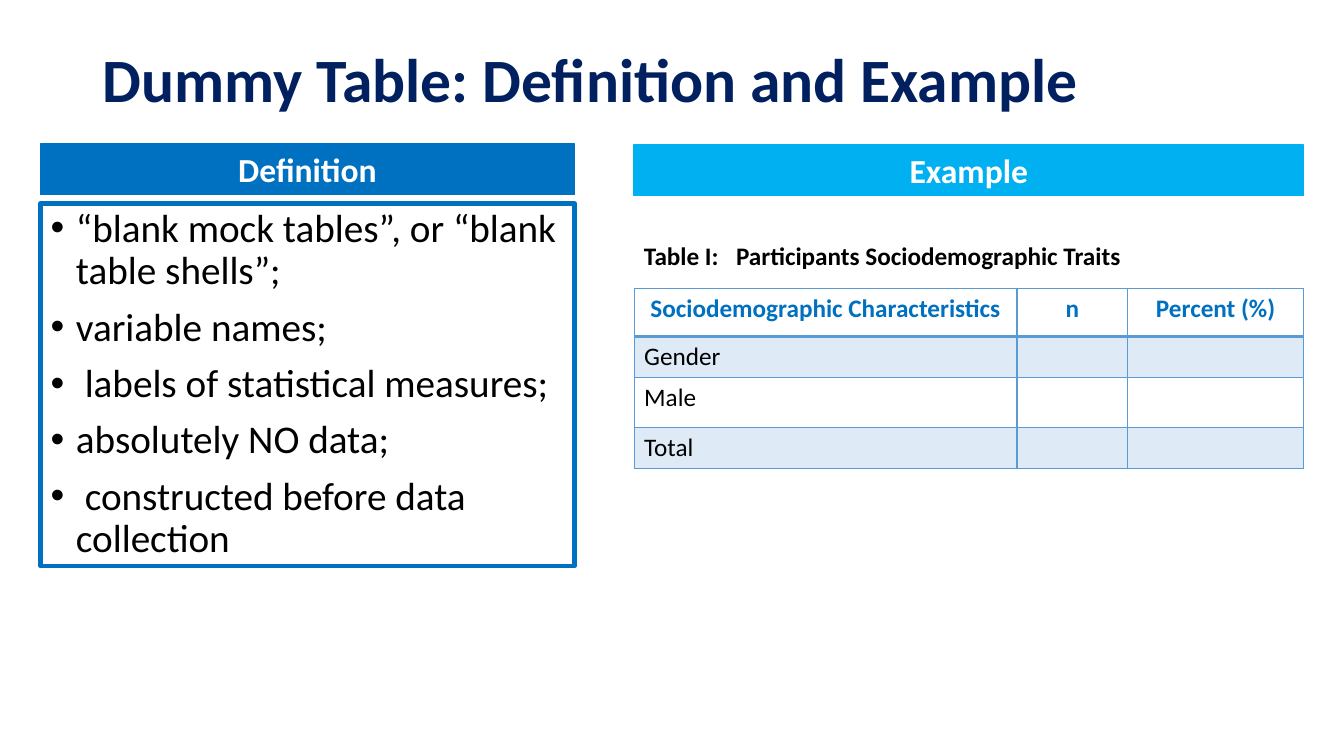
from dataclasses import dataclass

from lxml import etree
from pptx import Presentation
from pptx.dml.color import RGBColor
from pptx.enum.shapes import MSO_SHAPE
from pptx.enum.text import MSO_ANCHOR, MSO_AUTO_SIZE, PP_ALIGN
from pptx.oxml.ns import qn
from pptx.util import Cm, Pt

RECT = MSO_SHAPE.RECTANGLE
MIDDLE = MSO_ANCHOR.MIDDLE
TOP = MSO_ANCHOR.TOP
FIXED = MSO_AUTO_SIZE.NONE
LEFT = PP_ALIGN.LEFT
CENTER = PP_ALIGN.CENTER


@dataclass(frozen=True)
class Theme:
    font: str = "Calibri"
    navy: str = "002060"
    blue: str = "0070C0"
    sky: str = "00B0F0"
    grid: str = "5B9BD5"
    band: str = "DEEBF7"
    black: str = "000000"
    white: str = "FFFFFF"
    title: int = 44
    body: int = 28
    head: int = 24
    small: int = 18


class Page:
    def __init__(self, deck, theme):
        self.theme = theme
        self.slide = deck.slides.add_slide(deck.slide_layouts[1])

    def place(self, shape, box):
        shape.left, shape.top, shape.width, shape.height = map(Cm, box)

    def label(self, para, text, size, color, bold=False, align=LEFT):
        para.alignment = align
        run = para.add_run()
        run.text = text
        font = run.font
        font.name, font.size, font.bold = self.theme.font, Pt(size), bold
        font.color.rgb = RGBColor.from_string(color)

    def outline(self, shape, color, width):
        shape.line.color.rgb = RGBColor.from_string(color)
        shape.line.width = Pt(width)

    def title(self, text, box):
        shape = self.slide.shapes.title
        self.place(shape, box)
        frame = shape.text_frame
        frame.auto_size, frame.vertical_anchor = FIXED, MIDDLE
        para = frame.paragraphs[0]
        para.line_spacing = 0.9
        self.label(para, text, self.theme.title, self.theme.navy, True)

    def bullets(self, items, box):
        shape = self.slide.placeholders[1]
        self.place(shape, box)
        self.outline(shape, self.theme.blue, 3)
        frame = shape.text_frame
        frame.auto_size, frame.vertical_anchor = FIXED, TOP
        for i, item in enumerate(items):
            para = frame.add_paragraph() if i else frame.paragraphs[0]
            para.line_spacing, para.space_before = 0.9, Pt(10)
            self.label(para, item, self.theme.body, self.theme.black)
            props = para._p.get_or_add_pPr()
            indent = Cm(0.64)
            props.set("marL", str(indent))
            props.set("indent", str(-indent))
            etree.SubElement(props, qn("a:buFont"), typeface="Arial")
            etree.SubElement(props, qn("a:buChar"), char="•")

    def header(self, text, color, box):
        shape = self.slide.shapes.add_shape(RECT, *map(Cm, box))
        shape.shadow.inherit = False
        shape.fill.solid()
        shape.fill.fore_color.rgb = RGBColor.from_string(color)
        self.outline(shape, color, 1)
        frame = shape.text_frame
        frame.word_wrap, frame.vertical_anchor = True, TOP
        self.label(frame.paragraphs[0], text, self.theme.head,
                   self.theme.white, True, CENTER)

    def caption(self, text, stop, box):
        frame = self.slide.shapes.add_textbox(*map(Cm, box)).text_frame
        frame.word_wrap = True
        para = frame.paragraphs[0]
        self.label(para, text, self.theme.small, self.theme.black, True)
        tabs = etree.SubElement(para._p.get_or_add_pPr(), qn("a:tabLst"))
        etree.SubElement(tabs, qn("a:tab"), pos=str(Cm(stop)), algn="l")

    def border(self, cell, row):
        props = cell._tc.get_or_add_tcPr()
        thick = {0: "lnB", 1: "lnT"}.get(row)
        for i, side in enumerate(("lnL", "lnR", "lnT", "lnB")):
            width = Pt(2 if side == thick else 1)
            line = etree.Element(qn(f"a:{side}"), w=str(width))
            fill = etree.SubElement(line, qn("a:solidFill"))
            etree.SubElement(fill, qn("a:srgbClr"), val=self.theme.grid)
            props.insert(i, line)

    def table(self, rows, left, top, widths, heights):
        theme = self.theme
        table = self.slide.shapes.add_table(
            len(rows), len(widths), Cm(left), Cm(top),
            Cm(sum(widths)), Cm(sum(heights))).table
        table.first_row = table.horz_banding = False
        for col, width in zip(table.columns, widths):
            col.width = Cm(width)
        for r, (texts, height) in enumerate(zip(rows, heights)):
            table.rows[r].height = Cm(height)
            for c, text in enumerate(texts):
                cell = table.cell(r, c)
                if r % 2:
                    cell.fill.solid()
                    cell.fill.fore_color.rgb = RGBColor.from_string(theme.band)
                else:
                    cell.fill.background()
                self.border(cell, r)
                if text:
                    color = theme.black if r else theme.blue
                    self.label(cell.text_frame.paragraphs[0], text,
                               theme.small, color, not r,
                               LEFT if r else CENTER)


def main():
    deck = Presentation()
    deck.slide_width, deck.slide_height = Cm(33.87), Cm(19.05)
    theme = Theme()
    page = Page(deck, theme)
    near, far = 1.02, 15.98
    slim, wide = 13.46, 16.87
    page.title("Dummy Table: Definition and Example", (2.33, 1.02, 29.21, 2.13))
    page.bullets((
        "“blank mock tables”, or “blank table shells”;",
        "variable names;",
        " labels of statistical measures;",
        "absolutely NO data;",
        " constructed before data collection",
    ), (near, 5.13, slim, 9.14))
    page.table((
        ("Sociodemographic Characteristics", "n", "Percent (%)"),
        ("Gender", "", ""),
        ("Male", "", ""),
        ("Total", "", ""),
    ), far, 7.26, (9.65, 2.79, 4.43), (1.22, 1.03, 1.27, 1.03))
    page.header("Definition", theme.blue, (near, 3.63, slim, 1.28))
    page.header("Example", theme.sky, (far, 3.65, wide, 1.28))
    page.caption("Table I:\tParticipants Sociodemographic Traits", 2.32,
                 (far, 5.94, wide, 1.03))
    deck.save("out.pptx")


if __name__ == "__main__":
    main()
